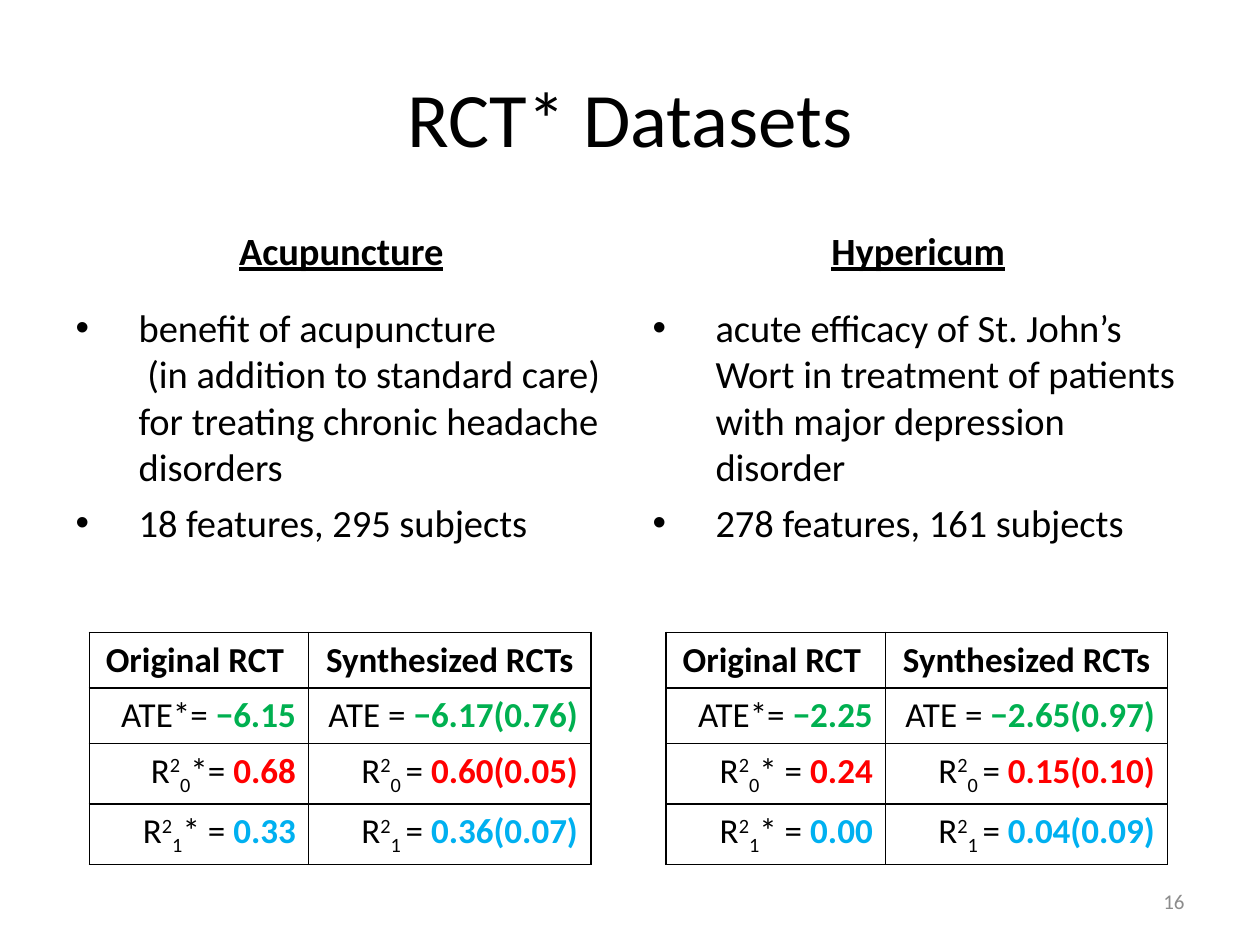
from dataclasses import dataclass
from typing import Optional

from lxml.etree import SubElement
from pptx import Presentation
from pptx.dml.color import RGBColor
from pptx.enum.text import MSO_ANCHOR, MSO_AUTO_SIZE, PP_ALIGN
from pptx.oxml.ns import qn
from pptx.util import Cm, Pt

FONT = "Calibri"
BLACK = "000000"
GREY = "8C8C8C"
GREEN = "00B050"
RED = "FF0000"
BLUE = "00B0F0"
COLUMN_WIDTHS = (4.42, 5.69)
ROW_HEIGHTS = (1.12, 1.12, 1.22, 1.22)
HEADERS = ("Original RCT ", "Synthesized RCTs")
SUPERSCRIPT = 30000
SUBSCRIPT = -25000


@dataclass
class Measure:
    color: str
    equals: str
    original: str
    synthesized: str
    index: Optional[int] = None


@dataclass
class Dataset:
    name: str
    benefit: str
    size: str
    left: float
    measures: list[Measure]


DATASETS = [
    Dataset(
        "Acupuncture",
        "benefit of acupuncture\v (in addition to standard care) for treating chronic headache disorders",
        "18 features, 295 subjects",
        1.27,
        [
            Measure(GREEN, "*= ", "−6.15", "−6.17(0.76)"),
            Measure(RED, "*= ", "0.68", "0.60(0.05)", 0),
            Measure(BLUE, "* = ", "0.33", "0.36(0.07)", 1),
        ],
    ),
    Dataset(
        "Hypericum",
        "acute efficacy of St. John’s Wort in treatment of patients with major depression disorder",
        "278 features, 161 subjects",
        12.9,
        [
            Measure(GREEN, "*= ", "−2.25", "−2.65(0.97)"),
            Measure(RED, "* = ", "0.24", "0.15(0.10)", 0),
            Measure(BLUE, "* = ", "0.00", "0.04(0.09)", 1),
        ],
    ),
]


def rgb(color: str) -> RGBColor:
    return RGBColor.from_string(color)


def style(font, size: float, color: str = BLACK, bold: bool = False) -> None:
    font.name = FONT
    font.size = Pt(size)
    font.color.rgb = rgb(color)
    font.bold = bold


def place(shape, left: float, top: float, width: float, height: float) -> None:
    shape.left, shape.top = Cm(left), Cm(top)
    shape.width, shape.height = Cm(width), Cm(height)


def write_title(shape) -> None:
    place(shape, 1.27, 0.76, 22.86, 3.18)
    shape.text_frame.vertical_anchor = MSO_ANCHOR.MIDDLE
    paragraph = shape.text_frame.paragraphs[0]
    paragraph.text = "RCT* Datasets"
    paragraph.alignment = PP_ALIGN.CENTER
    style(paragraph.font, 44)


def write_description(shape, dataset: Dataset) -> None:
    place(shape, dataset.left, 4.44, 11.22, 12.57)
    frame = shape.text_frame
    frame.auto_size = MSO_AUTO_SIZE.NONE
    heading = frame.paragraphs[0]
    heading.text = dataset.name
    heading.alignment = PP_ALIGN.CENTER
    heading.space_before, heading.space_after = Pt(6), Pt(12)
    style(heading.font, 22, bold=True)
    heading.font.underline = True
    SubElement(heading._p.get_or_add_pPr(), qn("a:buNone")).getparent().insert_element_before(
        heading._p.pPr.find(qn("a:buNone")), "a:tabLst", "a:defRPr", "a:extLst"
    )
    for text, before, after in ((dataset.benefit, 6, 6), (dataset.size, 0, 12)):
        paragraph = frame.add_paragraph()
        paragraph.text = text
        paragraph.space_before, paragraph.space_after = Pt(before), Pt(after)
        style(paragraph.font, 22)
        properties = paragraph._p.get_or_add_pPr()
        properties.set("marL", str(Cm(1.27)))
        properties.set("indent", str(-Cm(1.27)))


def add_borders(cell) -> None:
    properties = cell._tc.get_or_add_tcPr()
    for side in ("lnL", "lnR", "lnT", "lnB"):
        line = SubElement(properties, qn(f"a:{side}"), w=str(Pt(1)))
        fill = SubElement(line, qn("a:solidFill"))
        SubElement(fill, qn("a:srgbClr"), val=BLACK)


def add_run(paragraph, text: str, baseline: int = 0):
    run = paragraph.add_run()
    run.text = text
    if baseline:
        run._r.get_or_add_rPr().set("baseline", str(baseline))
    return run


def write_measure(paragraph, measure: Measure, original: bool) -> None:
    paragraph.alignment = PP_ALIGN.RIGHT
    style(paragraph.font, 20)
    if measure.index is None:
        add_run(paragraph, "ATE" + (measure.equals if original else " = "))
    else:
        add_run(paragraph, "R")
        add_run(paragraph, "2", SUPERSCRIPT)
        add_run(paragraph, f"{measure.index}" if original else f"{measure.index} ", SUBSCRIPT)
        add_run(paragraph, measure.equals if original else "= ")
    value = add_run(paragraph, measure.original if original else measure.synthesized)
    value.font.bold = True
    value.font.color.rgb = rgb(measure.color)


def add_results(slide, dataset: Dataset) -> None:
    table = slide.shapes.add_table(
        len(ROW_HEIGHTS), len(COLUMN_WIDTHS), Cm(dataset.left + 0.53), Cm(12.75),
        Cm(sum(COLUMN_WIDTHS)), Cm(sum(ROW_HEIGHTS)),
    ).table
    table.first_row = table.horz_banding = False
    for column, width in zip(table.columns, COLUMN_WIDTHS):
        column.width = Cm(width)
    for row, height in zip(table.rows, ROW_HEIGHTS):
        row.height = Cm(height)
    for cell in table.iter_cells():
        add_borders(cell)
        cell.fill.background()
    for column, header in enumerate(HEADERS):
        paragraph = table.cell(0, column).text_frame.paragraphs[0]
        paragraph.text = header
        paragraph.alignment = PP_ALIGN.CENTER
        style(paragraph.font, 20, bold=True)
        for row, measure in enumerate(dataset.measures, 1):
            write_measure(table.cell(row, column).text_frame.paragraphs[0], measure, column == 0)


def add_page_number(slide) -> None:
    frame = slide.shapes.add_textbox(Cm(18.21), Cm(17.65), Cm(5.92), Cm(1.02)).text_frame
    frame.word_wrap = True
    frame.vertical_anchor = MSO_ANCHOR.MIDDLE
    paragraph = frame.paragraphs[0]
    paragraph.text = "16"
    paragraph.alignment = PP_ALIGN.RIGHT
    style(paragraph.font, 12, GREY)


def main() -> None:
    presentation = Presentation()
    presentation.slide_width, presentation.slide_height = Cm(25.4), Cm(19.05)
    slide = presentation.slides.add_slide(presentation.slide_layouts[3])
    write_title(slide.shapes.title)
    for position, dataset in enumerate(DATASETS, 1):
        write_description(slide.placeholders[position], dataset)
        add_results(slide, dataset)
    add_page_number(slide)
    presentation.save("out.pptx")


if __name__ == "__main__":
    main()
